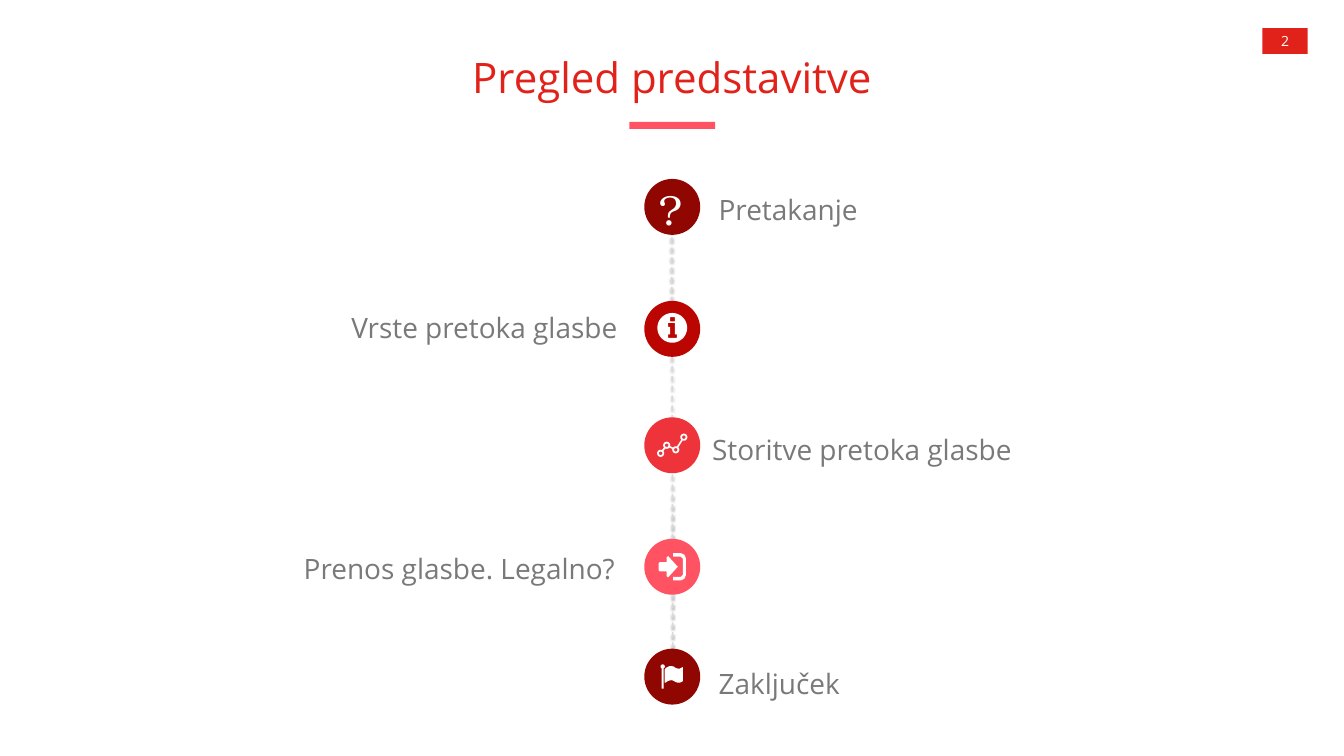
import math

import pptx
import pptx.dml.color
import pptx.enum.dml
import pptx.enum.shapes
import pptx.enum.text
import pptx.oxml
import pptx.util

COLUMNS, ROWS = 26.67, 15
ALIGN = pptx.enum.text.PP_ALIGN
ANCHOR = pptx.enum.text.MSO_ANCHOR
SHAPE = pptx.enum.shapes.MSO_SHAPE
NAMESPACE = "http://schemas.openxmlformats.org/drawingml/2006/main"
LINE_SHADOW = (
    f'<a:effectLst xmlns:a="{NAMESPACE}"><a:outerShdw blurRad="39400" dist="20300" dir="5400000" '
    'rotWithShape="0"><a:srgbClr val="000000"><a:alpha val="38000"/></a:srgbClr>'
    '</a:outerShdw></a:effectLst>'
)


def color(hex_code):
    return pptx.dml.color.RGBColor.from_string(hex_code)


def circle(x, y, radius, steps=32):
    angles = [2 * math.pi * step / steps for step in range(steps)]
    return [(x + radius * math.cos(a), y + radius * math.sin(a)) for a in angles]


def box(left, top, right, bottom):
    return [(left, top), (right, top), (right, bottom), (left, bottom)]


def link(start, end, gap=6.5, half=1.6):
    angle = math.atan2(end[1] - start[1], end[0] - start[0])
    dx, dy = math.cos(angle), math.sin(angle)
    return [(x + along * gap * dx - side * half * dy, y + along * gap * dy + side * half * dx)
            for (x, y), along, side in ((start, 1, 1), (end, -1, 1), (end, -1, -1), (start, 1, -1))]


class Deck:
    accent, muted, white, rail = "E1221B", "797979", "FFFFFF", "D9D9D9"
    font = "Open Sans"
    insets = (0.24, 0.12)
    heading = {"size": 60, "color_code": accent, "align": ALIGN.CENTER, "anchor": ANCHOR.MIDDLE}
    label = {"size": 40, "color_code": muted, "spacing": 1.1, "before": 8}

    def __init__(self):
        self.file = pptx.Presentation()
        self.file.slide_width = pptx.util.Inches(COLUMNS)
        self.file.slide_height = pptx.util.Inches(ROWS)
        self.slide = self.file.slides.add_slide(self.file.slide_layouts[0])

    def x(self, columns):
        return round(self.file.slide_width * columns / COLUMNS)

    def y(self, rows):
        return round(self.file.slide_height * rows / ROWS)

    def place(self, left, top, width, height):
        return self.x(left), self.y(top), self.x(width), self.y(height)

    def fill_text(self, holder, words, size, color_code, align=ALIGN.LEFT, anchor=ANCHOR.TOP,
                  font=None, spacing=None, before=0, insets=insets):
        frame = holder.text_frame
        frame.text = words
        paragraph = frame.paragraphs[0]
        letters = paragraph.runs[0].font
        across, down = self.x(insets[0]), self.y(insets[1])
        formats = [
            (frame, {"word_wrap": True, "auto_size": pptx.enum.text.MSO_AUTO_SIZE.NONE,
                     "vertical_anchor": anchor, "margin_left": across, "margin_right": across,
                     "margin_top": down, "margin_bottom": down}),
            (paragraph, {"alignment": align, "line_spacing": spacing,
                         "space_before": pptx.util.Pt(before)}),
            (letters, {"name": font or self.font, "size": pptx.util.Pt(size)}),
            (letters.color, {"rgb": color(color_code)}),
        ]
        for target, values in formats:
            for name, value in values.items():
                setattr(target, name, value)

    def styled(self, holder, words, style, **changes):
        self.fill_text(holder, words, **{**style, **changes})

    def placeholder(self, index, words, area, style):
        holder = self.slide.placeholders[index]
        for name, value in zip(("left", "top", "width", "height"), self.place(*area)):
            setattr(holder, name, value)
        self.styled(holder, words, style)

    def text(self, words, area, style, **changes):
        holder = self.slide.shapes.add_textbox(*self.place(*area))
        self.styled(holder, words, style, **changes)

    def paint(self, shape, fill):
        shape.shadow.inherit = False
        shape.fill.solid()
        shape.fill.fore_color.rgb = color(fill)
        shape.line.fill.background()
        return shape

    def shape(self, kind, area, fill):
        return self.paint(self.slide.shapes.add_shape(kind, *self.place(*area)), fill)

    def timeline(self, start, end):
        rail = self.slide.shapes.add_connector(
            pptx.enum.shapes.MSO_CONNECTOR.STRAIGHT,
            self.x(start[0]), self.y(start[1]), self.x(end[0]), self.y(end[1]))
        rail.line.color.rgb = color(self.rail)
        rail.line.width = pptx.util.Pt(2)
        rail.line.dash_style = pptx.enum.dml.MSO_LINE.DASH
        rail._element.spPr.append(pptx.oxml.parse_xml(LINE_SHADOW))

    def icon(self, outlines, center):
        detail = 100
        fine = [[(px * detail, py * detail) for px, py in outline] for outline in outlines]
        builder = self.slide.shapes.build_freeform(*fine[0][0], scale=self.x(0.01) / detail)
        for number, outline in enumerate(fine):
            if number:
                builder.move_to(*outline[0])
            builder.add_line_segments(outline[1:], close=True)
        self.paint(builder.convert_to_shape(self.x(center[0]), self.y(center[1])), self.white)


INFO = [
    circle(0, -2, 29.5, 64),
    box(-4, -23, 5, -15),
    [(-8, -12), (5, -12), (5, 11), (9, 11), (9, 18), (-8, 18), (-8, 11), (-4, 11), (-4, -4), (-8, -4)],
]
NODES = [(-23, 16), (-11, 0), (7, 9), (23, -16)]
GRAPH = [circle(*node, radius) for node in NODES for radius in (7, 3.5)]
GRAPH += [link(start, end) for start, end in zip(NODES, NODES[1:])]
ENTER = [
    [(11, 0), (-8, 21), (-11, 19), (-11, 9), (-25, 9), (-27, 7), (-27, -7), (-25, -9),
     (-11, -9), (-11, -19), (-8, -21)],
    [(2, -27), (17, -27), (24, -24), (27, -17), (27, 17), (24, 24), (17, 27), (2, 27),
     (2, 20), (17, 20), (21, 16), (21, -16), (17, -20), (2, -20)],
]
FLAG = [
    circle(-19, -20, 4.2),
    box(-21, -15.5, -17, 24),
    [(-15, -14), (-13, -17), (-9, -19), (-5, -21), (-2, -21), (3, -20), (7, -17), (11, -16),
     (15, -16), (21, -19), (21, 8), (20, 10), (15, 12), (11, 12), (7, 11), (2, 8), (-2, 7),
     (-6, 8), (-9, 9), (-13, 12), (-15, 12)],
]
AXIS, MARKER = 13.34, 1.11
MARKERS = [
    (3.55, "900600", None),
    (5.97, "BB0500", INFO),
    (8.28, "EF333B", GRAPH),
    (10.69, "FF5364", ENTER),
    (12.87, "900600", FLAG),
]
TOPICS = [
    ("Vrste pretoka glasbe", (6.44, 5.98, 6.05, 0.92), ALIGN.RIGHT),
    ("Storitve pretoka glasbe", (13.89, 8.39, 7.92, 0.92), ALIGN.LEFT),
    ("Prenos glasbe. Legalno?", (4.52, 10.75, 7.92, 0.98), ALIGN.RIGHT),
    ("Zaključek", (14.02, 13.03, 7.92, 0.98), ALIGN.LEFT),
]


def main():
    deck = Deck()
    deck.placeholder(0, "Pregled predstavitve", (2, 0.77, 22.67, 1.5), deck.heading)
    deck.placeholder(1, "Pretakanje", (14.02, 3.63, 7.92, 0.92), deck.label)
    page_badge = deck.shape(SHAPE.RECTANGLE, (25.05, 0.56, 0.9, 0.51), deck.accent)
    deck.styled(page_badge, "2", deck.heading, size=20, color_code=deck.white, insets=(0, 0))
    deck.shape(SHAPE.RECTANGLE, (12.49, 2.42, 1.7, 0.14), "FF5364")
    deck.timeline((13.33, 4.13), (13.35, 13.42))
    for top, fill, outlines in MARKERS:
        deck.shape(SHAPE.OVAL, (AXIS - MARKER / 2, top, MARKER, MARKER), fill)
        if outlines:
            deck.icon(outlines, (AXIS, top + MARKER / 2))
    for topic, area, align in TOPICS:
        deck.text(topic, area, deck.label, align=align)
    deck.text("?", (12.84, 3.42, 0.96, 1.27), deck.label,
              size=60, color_code=deck.white, font="TeX Gyre Bonum", before=12)
    deck.file.save("out.pptx")


if __name__ == "__main__":
    main()
